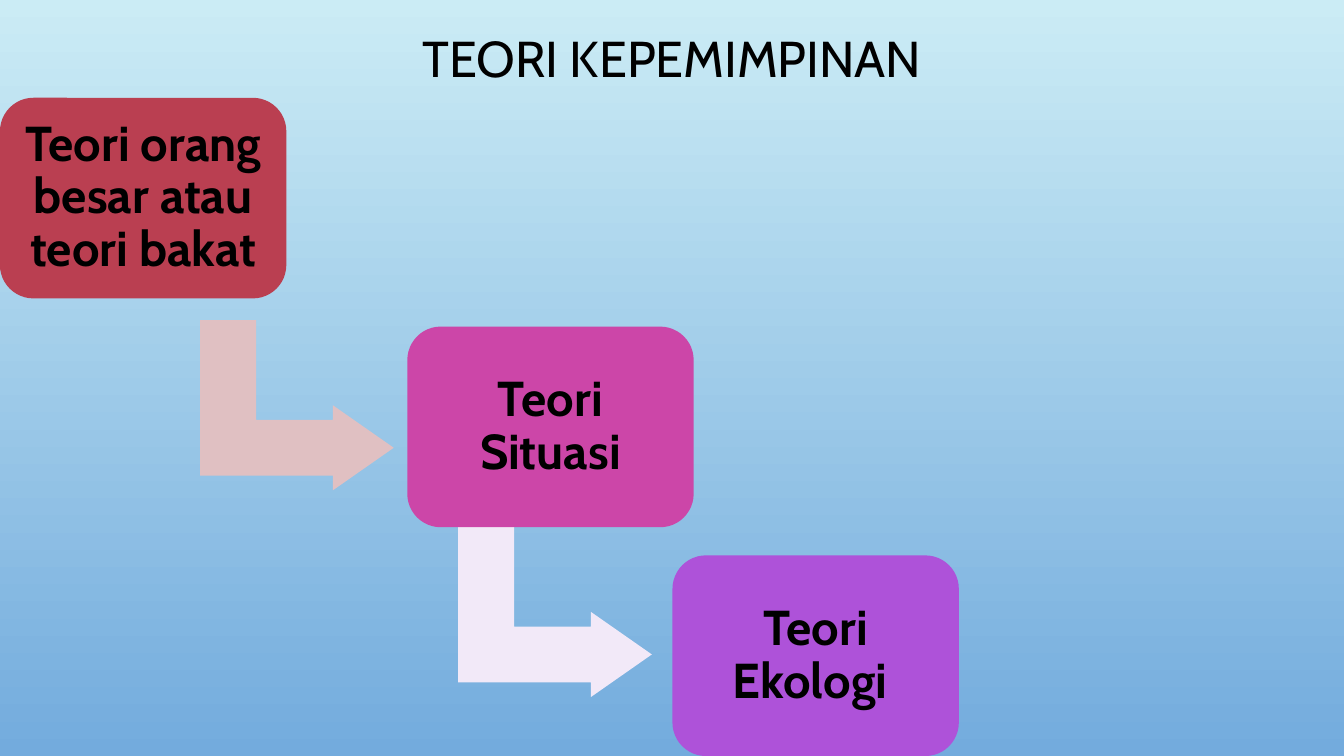
from dataclasses import dataclass

import pptx
import pptx.dml.color
import pptx.enum.shapes
import pptx.enum.text
import pptx.util

Inches = pptx.util.Inches
SHAPES = pptx.enum.shapes.MSO_SHAPE


@dataclass(frozen=True)
class Theme:
    font: str = "Cabin"
    title_size: int = 36
    box_size: int = 35
    text: str = "000000"
    sky: tuple = ("CBECF5", "73ABDD")
    boxes: tuple = ("BA3F51", "CC46A8", "AE52D9")
    arrows: tuple = ("E0C0C2", "F2E9F8")


THEME = Theme()
BOX_W, BOX_H = 2.84, 1.99
ARROW_W, ARROW_H = 1.69, 1.92
FIRST_TOP, STEP_DOWN = 0.97, 2.27
THEORIES = ("Teori orang besar atau teori bakat", "Teori Situasi", "Teori Ekologi ")
BOX_LEFTS = (0, 4.04, 6.67)
ARROW_OFFSETS = ((2.1, 2.09), (0.62, 1.87))


def rgb(value):
    return pptx.dml.color.RGBColor.from_string(value)


def set_text(shape, text, size, bold=False, inset=0.1):
    tf = shape.text_frame
    tf.word_wrap = True
    tf.auto_size = pptx.enum.text.MSO_AUTO_SIZE.NONE
    tf.vertical_anchor = pptx.enum.text.MSO_ANCHOR.MIDDLE
    tf.margin_left = tf.margin_right = Inches(inset)
    tf.margin_top = tf.margin_bottom = Inches(min(inset, 0.15))
    p = tf.paragraphs[0]
    p.alignment = pptx.enum.text.PP_ALIGN.CENTER
    p.line_spacing = 0.9
    r = p.add_run()
    r.text = text
    r.font.name = THEME.font
    r.font.size = pptx.util.Pt(size)
    r.font.bold = bold
    r.font.color.rgb = rgb(THEME.text)


def add_filled(s, kind, left, top, width, height, color):
    sp = s.shapes.add_shape(kind, Inches(left), Inches(top), Inches(width), Inches(height))
    sp.shadow.inherit = False
    sp.fill.solid()
    sp.fill.fore_color.rgb = rgb(color)
    sp.line.fill.background()
    return sp


def paint_background(s):
    fill = s.background.fill
    fill.gradient()
    fill.gradient_angle = 270
    for stop, color, position in zip(fill.gradient_stops, THEME.sky, (0, 1)):
        stop.color.rgb = rgb(color)
        stop.position = position


def place_title(s, left, top, width, height):
    title = s.shapes.title
    title.left, title.top = Inches(left), Inches(top)
    title.width, title.height = Inches(width), Inches(height)
    set_text(title, "TEORI KEPEMIMPINAN", THEME.title_size)


def add_arrow(s, left, top, color):
    sp = add_filled(s, SHAPES.BENT_UP_ARROW, left, top, ARROW_W, ARROW_H, color)
    sp.rotation = 90
    for i, value in enumerate((0.328, 0.25, 0.358)):
        sp.adjustments[i] = value


def add_staircase(s, top):
    """Place the theories as descending steps, each arrow behind the next box."""
    for i, (text, left) in enumerate(zip(THEORIES, BOX_LEFTS)):
        box_top = top + i * STEP_DOWN
        if i < len(ARROW_OFFSETS):
            dx, dy = ARROW_OFFSETS[i]
            add_arrow(s, left + dx, box_top + dy, THEME.arrows[i])
        sp = add_filled(s, SHAPES.ROUNDED_RECTANGLE, left, box_top, BOX_W, BOX_H, THEME.boxes[i])
        set_text(sp, text, THEME.box_size, bold=True, inset=0.15)


def main():
    prs = pptx.Presentation()
    prs.slide_width, prs.slide_height = Inches(13.33), Inches(7.5)
    s = prs.slides.add_slide(prs.slide_layouts[5])
    paint_background(s)
    place_title(s, 1, 0.06, 11.33, 1.1)
    add_staircase(s, FIRST_TOP)
    prs.save("out.pptx")


if __name__ == "__main__":
    main()
